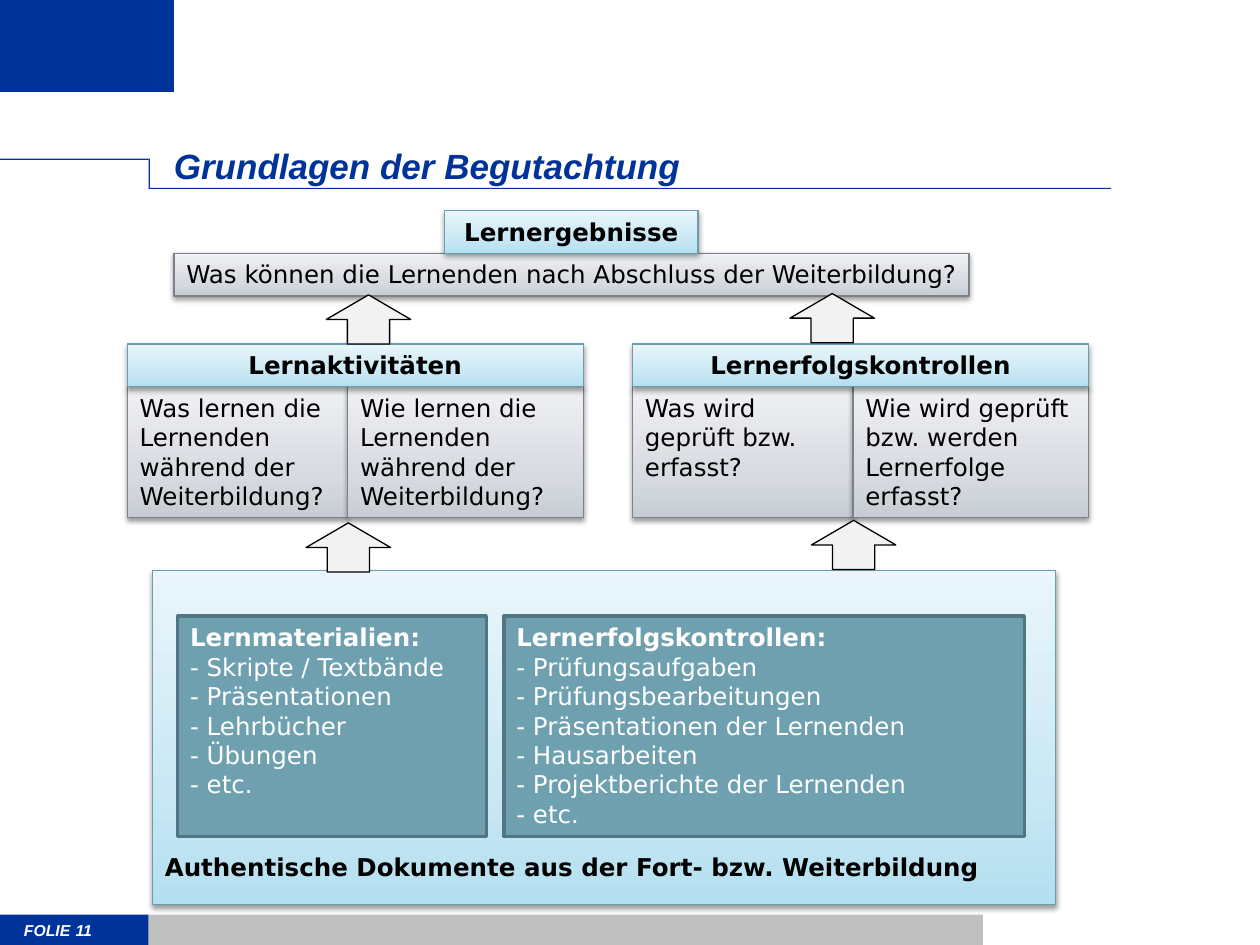
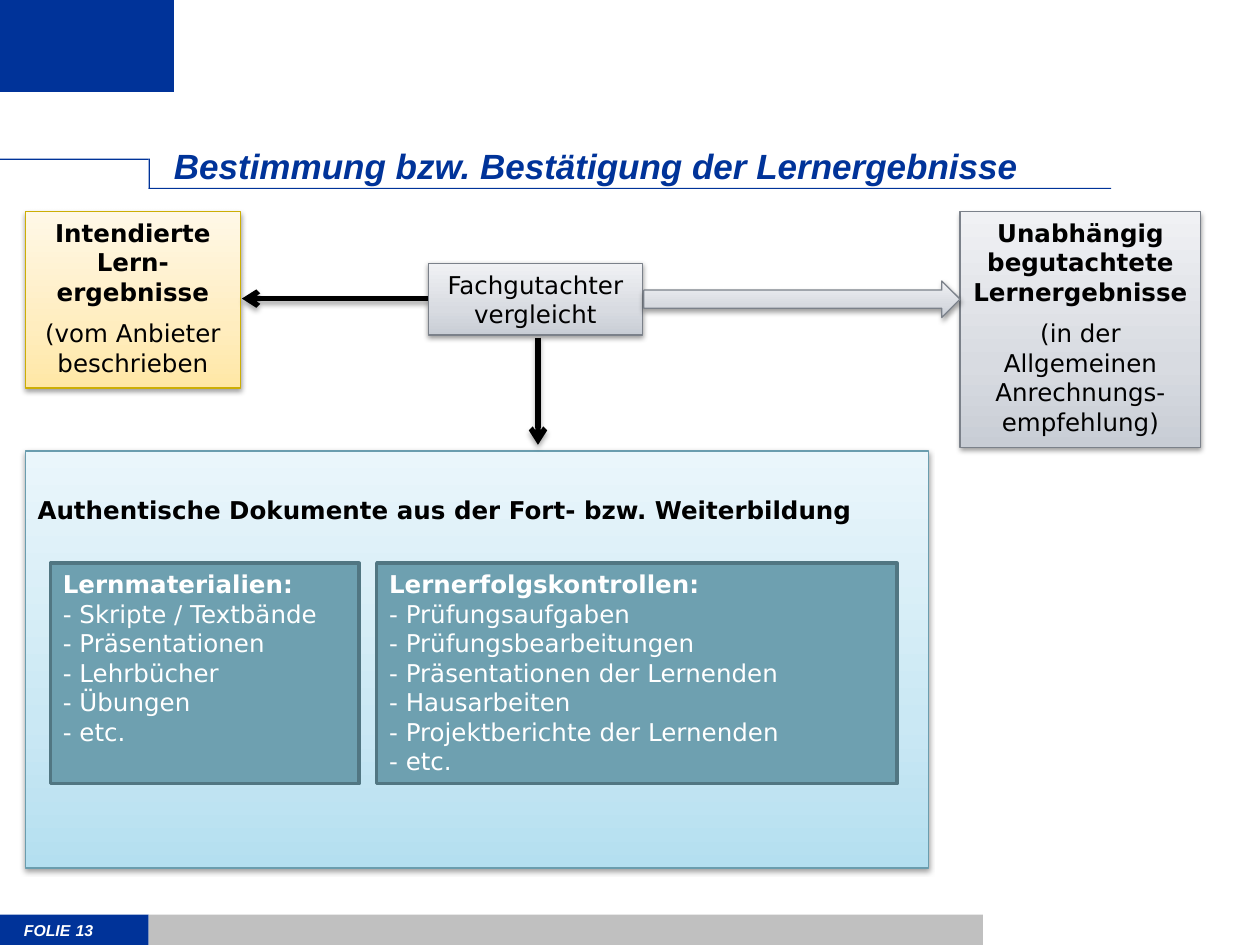
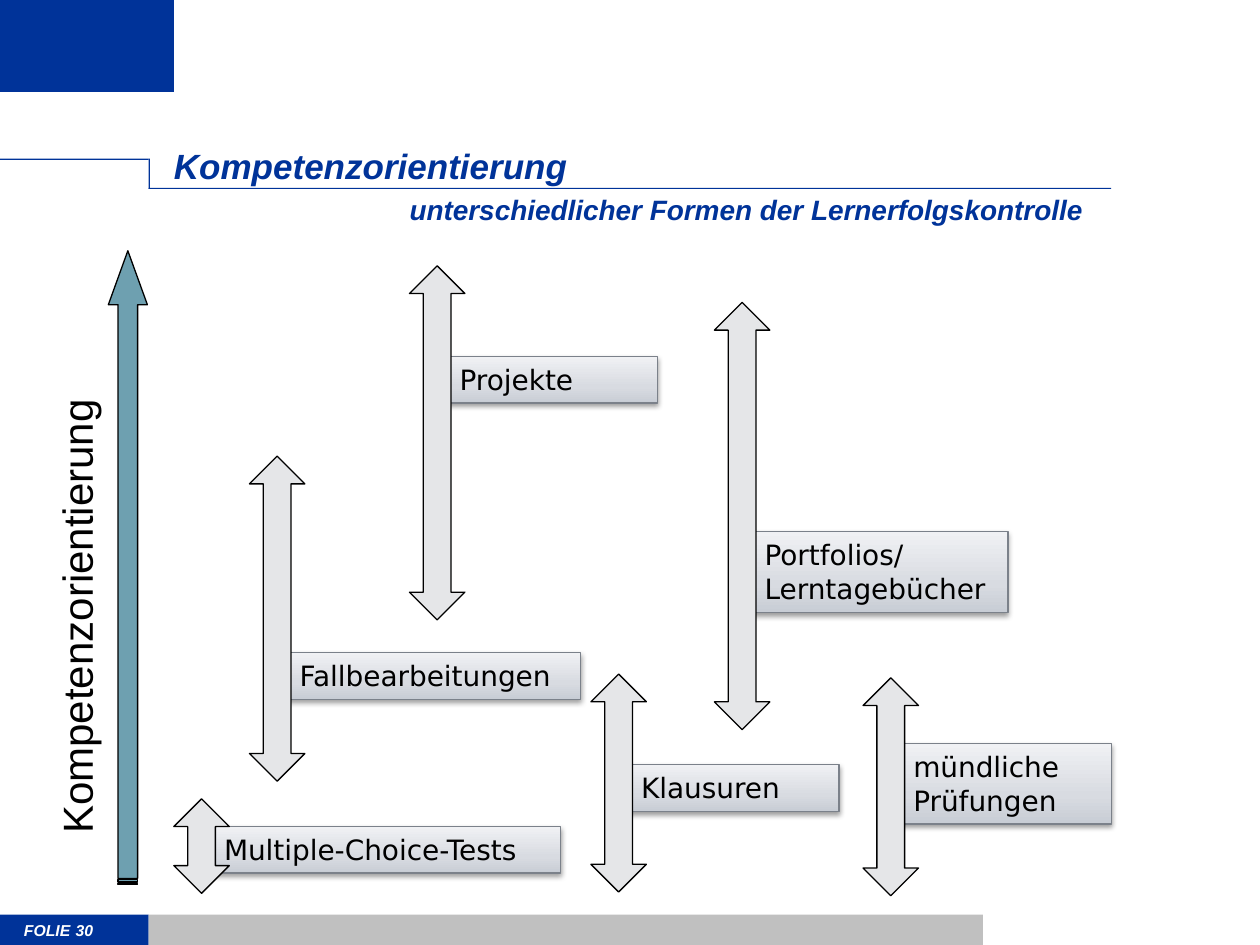
import pptx
import pptx.dml.color
import pptx.enum.shapes
import pptx.enum.text
import pptx.oxml
import pptx.oxml.ns
import pptx.util
import lxml.etree

Inches = pptx.util.Inches
Pt = pptx.util.Pt
SHAPES = pptx.enum.shapes.MSO_SHAPE
ALIGN = pptx.enum.text.PP_ALIGN
ANCHOR = pptx.enum.text.MSO_ANCHOR

NAVY, SILVER, BLACK, WHITE = "003399", "C0C0C0", "000000", "FFFFFF"
TEAL, TEAL_EDGE = "6EA0B0", "517682"
PALE, LIGHT = "F2F2F2", "E5E6E8"
GRAY = (("C8CDD5", "D8DBE1", "F0F1F4"), "7B818A")
BLUE = (("B4DFF0", "CAE8F4", "EAF6FB"), "6A9DAE")
YELLOW = (("FFE7A5", "FFEDBF", "FFF8E7"), "CCAE05")
STOPS = (0, 35, 100)
HEADING_FONT, BODY_FONT = "Arial", "DejaVu Sans"

MATERIALS = ("Lernmaterialien:\n",
             "- Skripte / Textbände\n- Präsentationen\n- Lehrbücher\n- Übungen\n- etc.")
CONTROLS = ("Lernerfolgskontrollen:\n",
            "- Prüfungsaufgaben\n- Prüfungsbearbeitungen\n- Präsentationen der Lernenden\n"
            "- Hausarbeiten\n- Projektberichte der Lernenden\n- etc.")


def colour(value):
    return pptx.dml.color.RGBColor.from_string(value)


def inches(box):
    return [Inches(length) for length in box]


def child(parent, tag, **attributes):
    return lxml.etree.SubElement(parent, pptx.oxml.ns.qn(tag),
                                 {name: str(value) for name, value in attributes.items()})


def write(frame, paragraphs, size=14, font=BODY_FONT, ink=BLACK, bold=False, italic=False,
          align=ALIGN.LEFT, anchor=ANCHOR.TOP, margins=(0.1, 0.05, 0.1, 0.05), gap=7):
    frame.word_wrap = True
    frame.auto_size = pptx.enum.text.MSO_AUTO_SIZE.NONE
    frame.vertical_anchor = anchor
    (frame.margin_left, frame.margin_top,
     frame.margin_right, frame.margin_bottom) = inches(margins)
    if isinstance(paragraphs, str):
        paragraphs = [[(paragraphs, bold)]]
    for index, spans in enumerate(paragraphs):
        para = frame.add_paragraph() if index else frame.paragraphs[0]
        para.alignment = align
        para.space_before = Pt(gap if index else 0)
        for text, heavy in spans:
            for number, line in enumerate(text.split("\n")):
                if number:
                    para.add_line_break()
                if line:
                    span = para.add_run()
                    span.text = line
                    span.font.size = Pt(size)
                    span.font.name = font
                    span.font.bold = heavy
                    span.font.italic = italic
                    span.font.color.rgb = colour(ink)


def heading(frame, text, **style):
    write(frame, text, **{"font": HEADING_FONT, "ink": NAVY, "bold": True, "italic": True,
                          "margins": (0, 0, 0, 0), **style})


def add_shadow(effects, alpha=38, distance=1.6):
    shadow = child(effects, "a:outerShdw", blurRad=Pt(3.1), dist=Pt(distance),
                   dir=5400000, rotWithShape=0)
    child(child(shadow, "a:srgbClr", val=BLACK), "a:alpha", val=alpha * 1000)


def solid(page, box, fill, edge=None, width=0.75, kind=SHAPES.RECTANGLE):
    shape = page.shapes.add_shape(kind, *inches(box))
    shape.shadow.inherit = False
    shape.fill.solid()
    shape.fill.fore_color.rgb = colour(fill)
    if edge:
        shape.line.color.rgb = colour(edge)
        shape.line.width = Pt(width)
    else:
        shape.line.fill.background()
    return shape


def shaded(page, box, theme, text="", kind=SHAPES.RECTANGLE, **style):
    tones, edge = theme
    shape = solid(page, box, tones[0], edge, kind=kind)
    shape.fill.gradient()
    shape.fill.gradient_angle = 90
    properties = shape.element.spPr
    stops = properties.find(".//" + pptx.oxml.ns.qn("a:gsLst"))
    stops.clear()
    for position, tone in zip(STOPS, tones):
        child(child(stops, "a:gs", pos=position * 1000), "a:srgbClr", val=tone)
    add_shadow(properties.find(pptx.oxml.ns.qn("a:effectLst")))
    if text:
        write(shape.text_frame, text, **style)
    return shape


def pointer(page, start, end):
    arrow = page.shapes.add_connector(pptx.enum.shapes.MSO_CONNECTOR.STRAIGHT,
                                      *inches(start + end))
    arrow.line.color.rgb = colour(BLACK)
    arrow.line.width = Pt(3)
    properties = arrow.element.spPr
    child(properties.find(pptx.oxml.ns.qn("a:ln")), "a:tailEnd", type="arrow")
    add_shadow(child(properties, "a:effectLst"), alpha=35, distance=1.8)


def text_box(page, box):
    return page.shapes.add_textbox(*inches(box))


def start_page(deck, title, number):
    page = deck.slides.add_slide(deck.slide_layouts[5])
    for box, fill in (((0, 7.26, 1.18, 0.24), NAVY), ((0, 0, 1.38, 0.73), NAVY),
                      ((0, 1.26, 1.18, 0.01), NAVY), ((1.18, 1.49, 7.64, 0.01), NAVY),
                      ((1.18, 1.26, 0.01, 0.24), NAVY), ((1.18, 7.26, 6.62, 0.24), SILVER)):
        solid(page, box, fill)
    for left, width, text in ((0.19, 0.4, "FOLIE"), (0.6, 0.41, number)):
        heading(text_box(page, (left, 7.11, width, 0.35)).text_frame, text,
                size=9, ink=WHITE, anchor=ANCHOR.BOTTOM)
    holder = page.shapes.title
    holder.left, holder.top, holder.width, holder.height = inches((1.38, 0.73, 8.5, 0.75))
    heading(holder.text_frame, title, size=20, anchor=ANCHOR.BOTTOM)
    return page


def evidence_panel(page, box, caption_top, cards_top):
    left, top = box[:2]
    shaded(page, box, BLUE, "Authentische Dokumente aus der Fort- bzw. Weiterbildung",
           bold=True, margins=(0.1, caption_top, 0.1, 0.05))
    for offset, width, (name, items) in ((2.79, 4.13, CONTROLS), (0.2, 2.45, MATERIALS)):
        card = solid(page, (left + offset, top + cards_top, width, 1.75), TEAL, TEAL_EDGE, 2)
        write(card.text_frame, [[(name, True), (items, False)]], ink=WHITE)


def question_block(page, box, title, questions):
    left, top, width, height = box
    header, first = 0.34, 1.75
    for offset, span, question in ((0, first, questions[0]),
                                   (first, width - first, questions[1])):
        shaded(page, (left + offset, top + header, span, height - header), GRAY, question)
    shaded(page, (left, top, width, header), BLUE, title, bold=True, align=ALIGN.CENTER)


def outcome_block(page, box):
    left, top, width, height = box
    row = height / 2
    shaded(page, (left, top + row, width, row), GRAY,
           "Was können die Lernenden nach Abschluss der Weiterbildung?",
           margins=(0.1, 0.05, 0, 0.05))
    shaded(page, (left + 2.15, top, 2.01, row), BLUE, "Lernergebnisse",
           bold=True, align=ALIGN.CENTER)


def assessment_form(page, box, name, label_top, label_width, label_height):
    left, top = box[:2]
    shaded(page, (left + 0.3, top + label_top, label_width, label_height), GRAY, name, size=16)
    solid(page, box, LIGHT, BLACK, kind=SHAPES.UP_DOWN_ARROW)


def competence_axis(page, box):
    left, top, width, height = box
    middle = left + width / 2
    length, thickness = height, 0.31
    arrow = solid(page, (middle + 0.2 - length / 2, top + (length - thickness) / 2,
                         length, thickness), TEAL, BLACK, kind=SHAPES.STRIPED_RIGHT_ARROW)
    arrow.adjustments[0], arrow.adjustments[1] = 0.5, 1.38
    arrow.rotation = 270
    label = text_box(page, (middle - 0.21 - 4.05 / 2, top + 2.45, 4.05, 0.5))
    label.rotation = 270
    write(label.text_frame, "Kompetenzorientierung", size=24, font=HEADING_FONT)


def build_foundations(deck):
    page = start_page(deck, "Grundlagen der Begutachtung", "11")
    evidence_panel(page, (1.21, 4.53, 7.17, 2.65), 2.23, 0.36)
    outcome_block(page, (1.38, 1.67, 6.31, 0.68))
    question_block(page, (5.02, 2.73, 3.62, 1.38), "Lernerfolgskontrollen",
                   ("Was wird geprüft bzw.\nerfasst?",
                    "Wie wird geprüft bzw. werden Lernerfolge\nerfasst?"))
    question_block(page, (1.01, 2.73, 3.62, 1.38), "Lernaktivitäten",
                   ("Was lernen die Lernenden während der Weiterbildung?",
                    "Wie lernen die Lernenden während der Weiterbildung?"))
    for left, top in ((2.59, 2.34), (6.27, 2.33), (2.43, 4.15), (6.44, 4.13)):
        solid(page, (left, top, 0.67, 0.39), PALE, BLACK, kind=SHAPES.UP_ARROW)


def build_comparison(deck):
    page = start_page(deck, "Bestimmung bzw. Bestätigung der Lernergebnisse", "13")
    for box, theme, name, remark in (
            ((7.62, 1.68, 1.91, 1.87), GRAY, "Unabhängig begutachtete Lernergebnisse",
             "(in der Allgemeinen Anrechnungs-empfehlung)"),
            ((0.2, 1.68, 1.71, 1.4), YELLOW, "Intendierte Lern-ergebnisse",
             "(vom Anbieter beschrieben")):
        shaded(page, box, theme, [[(name, True)], [(remark, False)]], align=ALIGN.CENTER)
    pointer(page, (3.4, 2.37), (1.92, 2.37))
    evidence_panel(page, (0.2, 3.58, 7.17, 3.31), 0.35, 0.89)
    shaded(page, (3.4, 2.09, 1.7, 0.57), GRAY, "Fachgutachter vergleicht", align=ALIGN.CENTER)
    pointer(page, (4.27, 2.68), (4.27, 3.53))
    shaded(page, (5.11, 2.23, 2.51, 0.29), GRAY, kind=SHAPES.RIGHT_ARROW)


def build_competence(deck):
    page = start_page(deck, "Kompetenzorientierung", "30")
    heading(text_box(page, (3.25, 1.53, 6.29, 0.27)).text_frame,
            "unterschiedlicher Formen der Lernerfolgskontrolle", size=16)
    competence_axis(page, (0.45, 1.99, 0.73, 5.03))
    for left, top, height, *label in (
            (4.69, 5.35, 1.73, "Klausuren", 0.72, 1.67, 0.37),
            (1.38, 6.34, 0.75, "Multiple-Choice-Tests", 0.22, 2.77, 0.37),
            (6.85, 5.38, 1.73, "mündliche Prüfungen", 0.52, 1.67, 0.64),
            (1.98, 3.62, 2.58, "Fallbearbeitungen", 1.56, 2.33, 0.37),
            (3.25, 2.11, 2.81, "Projekte", 0.72, 1.67, 0.37),
            (5.67, 2.4, 3.39, "Portfolios/\nLerntagebücher", 1.82, 2.03, 0.64)):
        assessment_form(page, (left, top, 0.44, height), *label)


def main():
    deck = pptx.Presentation()
    deck.slide_width, deck.slide_height = Inches(10), Inches(7.5)
    build_foundations(deck)
    build_comparison(deck)
    build_competence(deck)
    deck.save("out.pptx")


if __name__ == "__main__":
    main()
